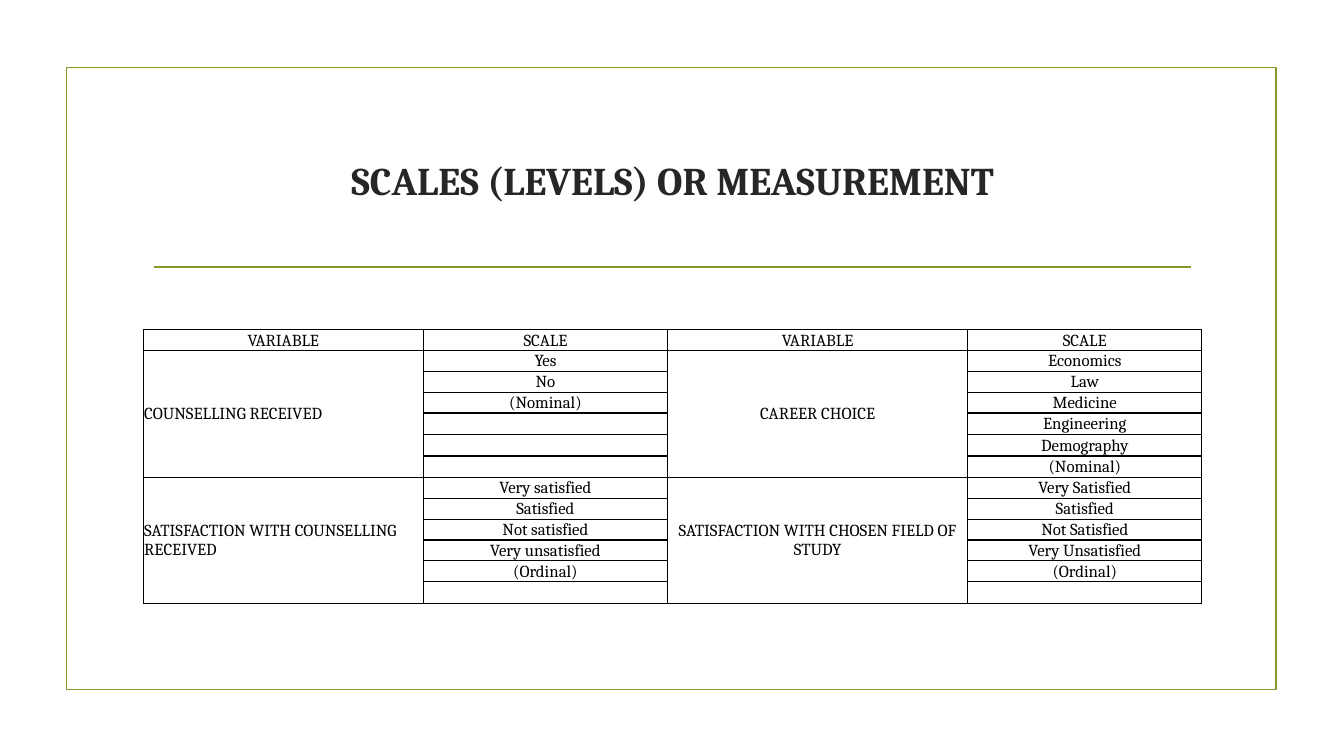
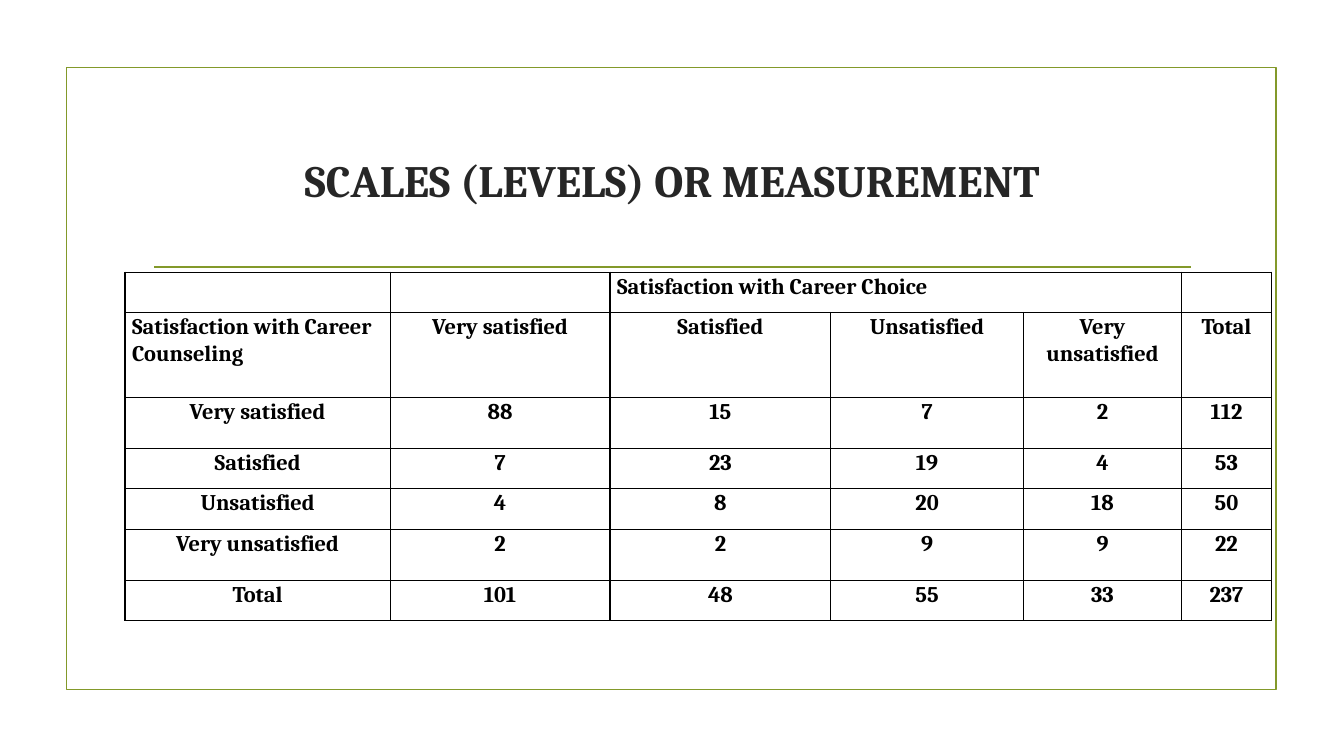
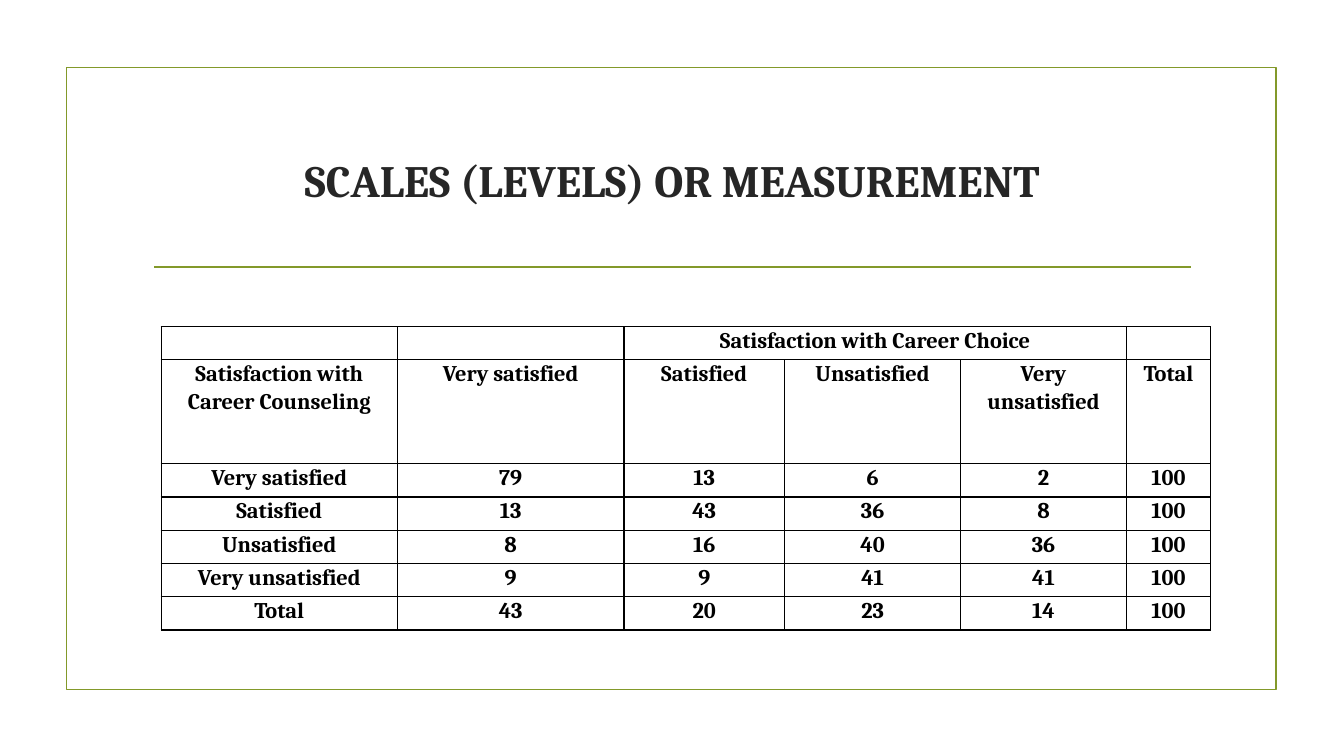
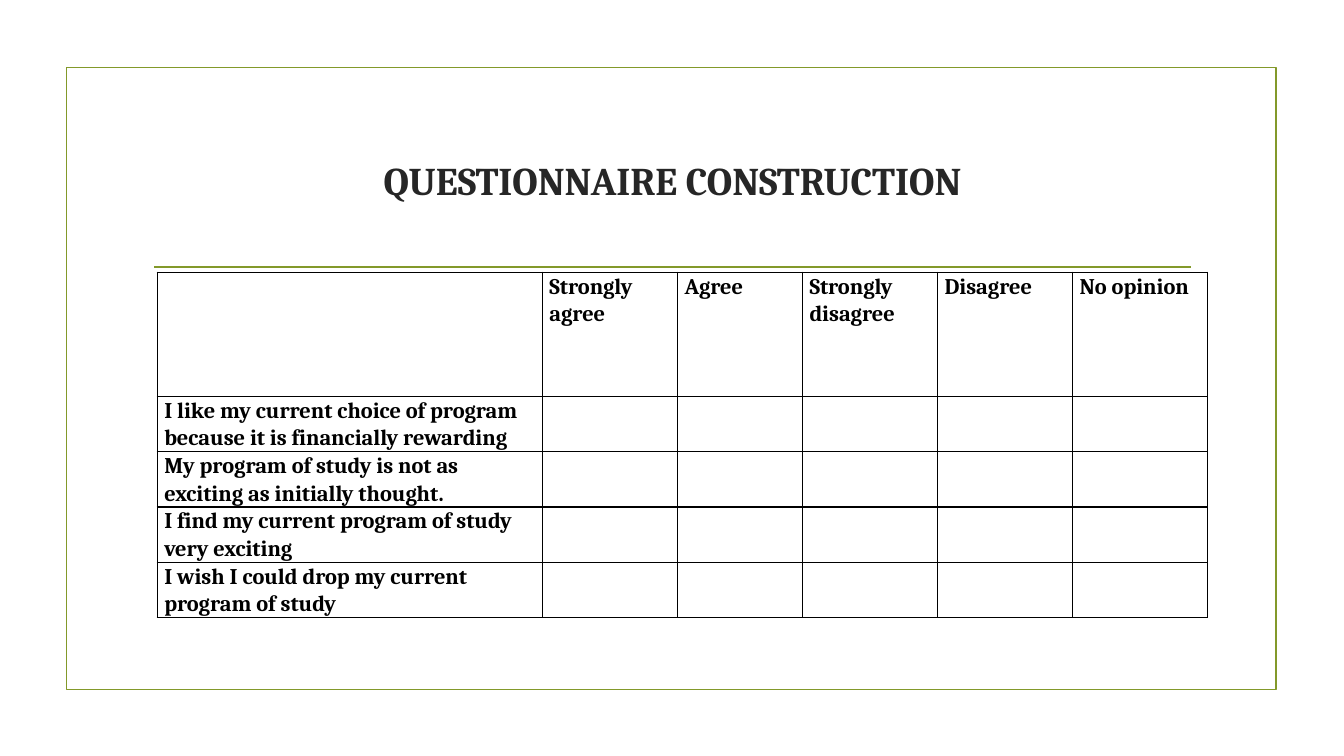
from lxml.etree import SubElement
from pptx import Presentation
from pptx.dml.color import RGBColor
from pptx.enum.shapes import MSO_CONNECTOR, MSO_SHAPE
from pptx.enum.text import MSO_ANCHOR, PP_ALIGN
from pptx.oxml.ns import qn
from pptx.util import Pt

PX = 9144  # EMU per px, 100 px to the inch
FONT = "Cambria"
GREEN = RGBColor(0x83, 0x99, 0x2A)
DARK = RGBColor(0x26, 0x26, 0x26)
BLACK = RGBColor(0, 0, 0)
LEFT, CENTER = PP_ALIGN.LEFT, PP_ALIGN.CENTER

# Shared look of the tables
SMALL = dict(size=12, bold=False, anchor=MSO_ANCHOR.MIDDLE, margins=(1, 1, 1, 0),
             paragraph=dict())
COUNTS = dict(size=16, bold=True, anchor=MSO_ANCHOR.TOP, margins=(7, 0, 7, 0),
              paragraph=dict(line_spacing=1.07, space_after=Pt(8)))
SURVEY = {**COUNTS, "paragraph": dict(line_spacing=1.07)}

# Content
SCALES_TITLE = "SCALES (LEVELS) OR MEASUREMENT"
CHOICE_HEADING = ["", "", "Satisfaction with Career Choice", "", "", ""]
ANSWERS = ["Very satisfied", "Satisfied", "Unsatisfied", "Very unsatisfied", "Total"]
COUNSELING_HEADING = ["Satisfaction with Career Counseling", *ANSWERS]


def cross_table(counts):
    """Heading rows followed by one row of counts per answer."""
    rows = [[answer, *map(str, row)] for answer, row in zip(ANSWERS, counts)]
    return [CHOICE_HEADING, COUNSELING_HEADING, *rows]


SLIDES = [
    dict(
        title=SCALES_TITLE, title_size=28, style=SMALL,
        left=142, top=327, columns=[278, 242, 298, 232], height=269,
        align=CENTER, left_cells=[(1, 0), (7, 0)],
        merges=[(1, 0, 6, 0), (1, 2, 6, 2), (7, 0, 12, 0), (7, 2, 12, 2)],
        cells=[
            ["VARIABLE", "SCALE", "VARIABLE", "SCALE"],
            ["COUNSELLING RECEIVED", "Yes", "CAREER CHOICE", "Economics"],
            ["", "No", "", "Law"],
            ["", "(Nominal)", "", "Medicine"],
            ["", "", "", "Engineering"],
            ["", "", "", "Demography"],
            ["", "", "", "(Nominal)"],
            ["SATISFACTION WITH COUNSELLING RECEIVED", "Very satisfied",
             "SATISFACTION WITH CHOSEN FIELD OF STUDY", "Very Satisfied"],
            ["", "Satisfied", "", "Satisfied"],
            ["", "Not satisfied", "", "Not Satisfied"],
            ["", "Very unsatisfied", "", "Very Unsatisfied"],
            ["", "(Ordinal)", "", "(Ordinal)"],
            ["", "", "", ""],
        ],
    ),
    dict(
        title=SCALES_TITLE, title_size=32, style=COUNTS,
        left=124, top=270, columns=[263, 218, 219, 191, 157, 89],
        rows=[40, 84, 51, 40, 40, 51, 40],
        align=CENTER, left_cells=[(0, 2), (1, 0)], merges=[(0, 2, 0, 4)],
        cells=cross_table([
            (88, 15, 7, 2, 112),
            (7, 23, 19, 4, 53),
            (4, 8, 20, 18, 50),
            (2, 2, 9, 9, 22),
            (101, 48, 55, 33, 237),
        ]),
    ),
    dict(
        title=SCALES_TITLE, title_size=32, style=COUNTS,
        left=160, top=324, columns=[234, 225, 159, 175, 164, 84],
        rows=[33, 103, 33, 33, 33, 33, 33],
        align=CENTER, left_cells=[], merges=[(0, 2, 0, 4)],
        cells=cross_table([
            (79, 13, 6, 2, 100),
            (13, 43, 36, 8, 100),
            (8, 16, 40, 36, 100),
            (9, 9, 41, 41, 100),
            (43, 20, 23, 14, 100),
        ]),
    ),
    dict(
        title="QUESTIONNAIRE CONSTRUCTION", title_size=28, style=SURVEY,
        left=156, top=270, columns=[382, 134, 124, 134, 134, 134],
        rows=[123, 55, 55, 55, 55],
        align=LEFT, left_cells=[], merges=[],
        cells=[["", "Strongly agree", "Agree", "Strongly disagree", "Disagree", "No opinion"]]
        + [[statement] + [""] * 5 for statement in (
            "I like my current choice of program because it is financially rewarding",
            "My program of study is not as exciting as initially thought.",
            "I find my current program of study very exciting",
            "I wish I could drop my current program of study",
        )],
    ),
]


def apply(target, **values):
    for name, value in values.items():
        setattr(target, name, value)


def px(*lengths):
    return [length * PX for length in lengths]


def set_font(font, size, bold, color):
    apply(font, name=FONT, size=Pt(size), bold=bold)
    font.color.rgb = color


def decorate_layout(layout, slide):
    """Give the layout its frame, rule and title place; slide only serves to draw them."""
    frame = slide.shapes.add_shape(MSO_SHAPE.RECTANGLE, *px(66, 67, 1200, 617))
    frame.fill.background()
    frame.shadow.inherit = False
    rule = slide.shapes.add_connector(MSO_CONNECTOR.STRAIGHT, *px(153, 265, 1181, 265))
    SubElement(rule._element.spPr, qn("a:effectLst"))
    for position, shape in enumerate((frame, rule), start=2):
        shape.line.color.rgb = GREEN
        shape.line.width = Pt(1.25)
        layout.shapes._spTree.insert(position, shape._element)
    title = layout.placeholders[0]
    apply(title, **dict(zip(("left", "top", "width", "height"), px(142, 107, 1050, 143))))
    title.text_frame.vertical_anchor = MSO_ANCHOR.MIDDLE


def add_title(slide, text, size):
    paragraph = slide.shapes.title.text_frame.paragraphs[0]
    paragraph.alignment = CENTER
    run = paragraph.add_run()
    run.text = text
    set_font(run.font, size, True, DARK)


def set_borders(cell):
    properties = cell._tc.get_or_add_tcPr()
    for side in ("lnL", "lnR", "lnT", "lnB"):
        line = SubElement(properties, qn(f"a:{side}"), w=str(Pt(1)))
        fill = SubElement(line, qn("a:solidFill"))
        SubElement(fill, qn("a:srgbClr"), val=str(BLACK))


def fill_cell(cell, text, alignment, style):
    set_borders(cell)
    cell.fill.background()
    sides = ("margin_left", "margin_top", "margin_right", "margin_bottom")
    apply(cell, vertical_anchor=style["anchor"], **dict(zip(sides, px(*style["margins"]))))
    paragraph = cell.text_frame.paragraphs[0]
    apply(paragraph, alignment=alignment, **style["paragraph"])
    if text:
        run = paragraph.add_run()
        run.text = text
        set_font(run.font, style["size"], style["bold"], BLACK)
    else:  # keeps an empty row from growing
        SubElement(paragraph._p, qn("a:endParaRPr"), sz=str(style["size"] * 100))


def add_table(slide, content):
    cells, columns = content["cells"], content["columns"]
    heights = px(*content["rows"]) if "rows" in content else (
        [content["height"] * PX // len(cells)] * len(cells))
    table = slide.shapes.add_table(
        len(cells), len(columns), *px(content["left"], content["top"], sum(columns)),
        sum(heights)).table
    apply(table, first_row=False, horz_banding=False)
    for column, width in zip(table.columns, px(*columns)):
        column.width = width
    for row, height in zip(table.rows, heights):
        row.height = height
    for r, row in enumerate(cells):
        for c, text in enumerate(row):
            alignment = LEFT if (r, c) in content["left_cells"] else content["align"]
            fill_cell(table.cell(r, c), text, alignment, content["style"])
    for top, left, bottom, right in content["merges"]:
        table.cell(top, left).merge(table.cell(bottom, right))


def main():
    presentation = Presentation()
    apply(presentation, **dict(zip(("slide_width", "slide_height"), px(1333, 750))))
    layout = presentation.slide_layouts[5]
    for number, content in enumerate(SLIDES):
        slide = presentation.slides.add_slide(layout)
        if number == 0:
            decorate_layout(layout, slide)
        add_title(slide, content["title"], content["title_size"])
        add_table(slide, content)
    presentation.save("out.pptx")


if __name__ == "__main__":
    main()
